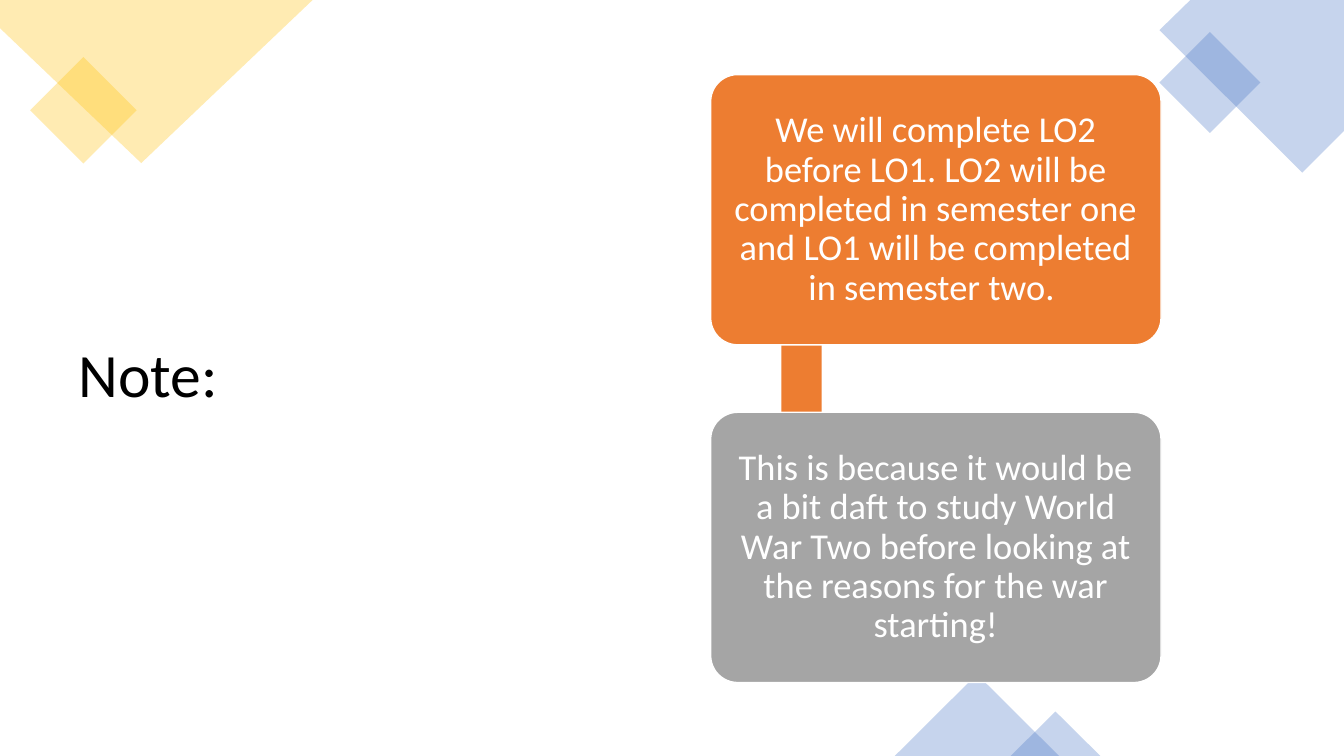
"""Build the note slide about the order of LO1 and LO2."""
import lxml.etree
import pptx
import pptx.dml.color
import pptx.enum.shapes
import pptx.enum.text
import pptx.oxml.ns
import pptx.util

Cm = pptx.util.Cm
SHAPES = pptx.enum.shapes.MSO_SHAPE
ALIGN = pptx.enum.text.PP_ALIGN
COLOURS = {
    "yellow": "FFC000",
    "blue": "4472C4",
    "orange": "ED7D31",
    "grey": "A5A5A5",
    "white": "FFFFFF",
    "black": "000000",
}
CARDS = [
    ("orange", "We will complete LO2 before LO1. LO2 will be completed in semester one "
               "and LO1 will be completed in semester two. "),
    ("grey", "This is because it would be a bit daft to study World War Two before "
             "looking at the reasons for the war starting!"),
]
CARD_TOP, CARD_PITCH = 1.88, 8.51


def rgb(name):
    """Return the named colour."""
    return pptx.dml.color.RGBColor.from_string(COLOURS[name])


def paint(shape, colour, opacity=100):
    """Fill a shape without outline or shadow, at the given opacity in percent."""
    shape.shadow.inherit = False
    shape.line.fill.background()
    shape.fill.solid()
    shape.fill.fore_color.rgb = rgb(colour)
    if opacity < 100:
        tone = shape.fill._xPr.find(".//" + pptx.oxml.ns.qn("a:srgbClr"))
        alpha = lxml.etree.SubElement(tone, pptx.oxml.ns.qn("a:alpha"))
        alpha.set("val", str(opacity * 1000))


def add_block(page, kind, place, colour, opacity=100, rotation=0):
    """Add a preset shape at left, top, width, height in centimetres."""
    block = page.shapes.add_shape(kind, *map(Cm, place))
    block.rotation = rotation
    paint(block, colour, opacity)
    return block


def add_corner(page, points, colour):
    """Add a translucent polygon through points in centimetres."""
    corners = [(Cm(x), Cm(y)) for x, y in points]
    builder = page.shapes.build_freeform(*corners[0])
    builder.add_line_segments(corners[1:], close=True)
    paint(builder.convert_to_shape(), colour, 30)


def write(box, text, size, colour, alignment):
    """Write one vertically centred paragraph into a box."""
    frame = box.text_frame
    frame.word_wrap = True
    frame.vertical_anchor = pptx.enum.text.MSO_ANCHOR.MIDDLE
    para = frame.paragraphs[0]
    para.alignment = alignment
    para.line_spacing = 0.9
    span = para.add_run()
    span.text = text
    span.font.name = "Calibri"
    span.font.size = pptx.util.Pt(size)
    span.font.color.rgb = rgb(colour)


def add_card(page, top, colour, text):
    """Add a rounded card with a white outline and centred text."""
    card = add_block(page, SHAPES.ROUNDED_RECTANGLE, (17.91, top, 11.35, 6.81), colour)
    card.adjustments[0] = 0.1
    card.line.color.rgb = rgb("white")
    card.line.width = pptx.util.Pt(1)
    frame = card.text_frame
    frame.margin_left = frame.margin_right = Cm(0.28)
    frame.margin_top = frame.margin_bottom = Cm(0.28)
    write(card, text, 26, "white", ALIGN.CENTER)


def add_decoration(page):
    """Add the translucent corner shapes."""
    add_block(page, SHAPES.RECTANGLE, (1.15, 1.83, 1.9, 1.9), "yellow", 30, 45)
    add_corner(page, [(0, 0), (7.88, 0), (3.56, 4.11), (0, 0.71)], "yellow")
    add_corner(page, [(30, 0), (33.87, 0), (33.87, 3.3), (32.82, 4.35), (29.22, 0.76)], "blue")
    add_block(page, SHAPES.RECTANGLE, (29.59, 1.18, 1.8, 1.8), "blue", 30, 45)
    for place in [(22.55, 16.99, 4.14, 2.06), (25.47, 17.93, 2.26, 1.12)]:
        add_block(page, SHAPES.ISOSCELES_TRIANGLE, place, "blue", 30)


def main():
    """Build and save the slide."""
    deck = pptx.Presentation()
    deck.slide_width, deck.slide_height = Cm(33.87), Cm(19.05)
    page = deck.slides.add_slide(deck.slide_layouts[6])
    add_decoration(page)
    title = page.shapes.add_textbox(Cm(1.73), Cm(3.23), Cm(10), Cm(12.57))
    write(title, "Note:", 44, "black", ALIGN.LEFT)
    add_block(page, SHAPES.RECTANGLE, (19.69, 3.58, 1.02, 8.43), "orange")
    for index, (colour, text) in enumerate(CARDS):
        add_card(page, CARD_TOP + index * CARD_PITCH, colour, text)
    deck.save("out.pptx")


if __name__ == "__main__":
    main()
